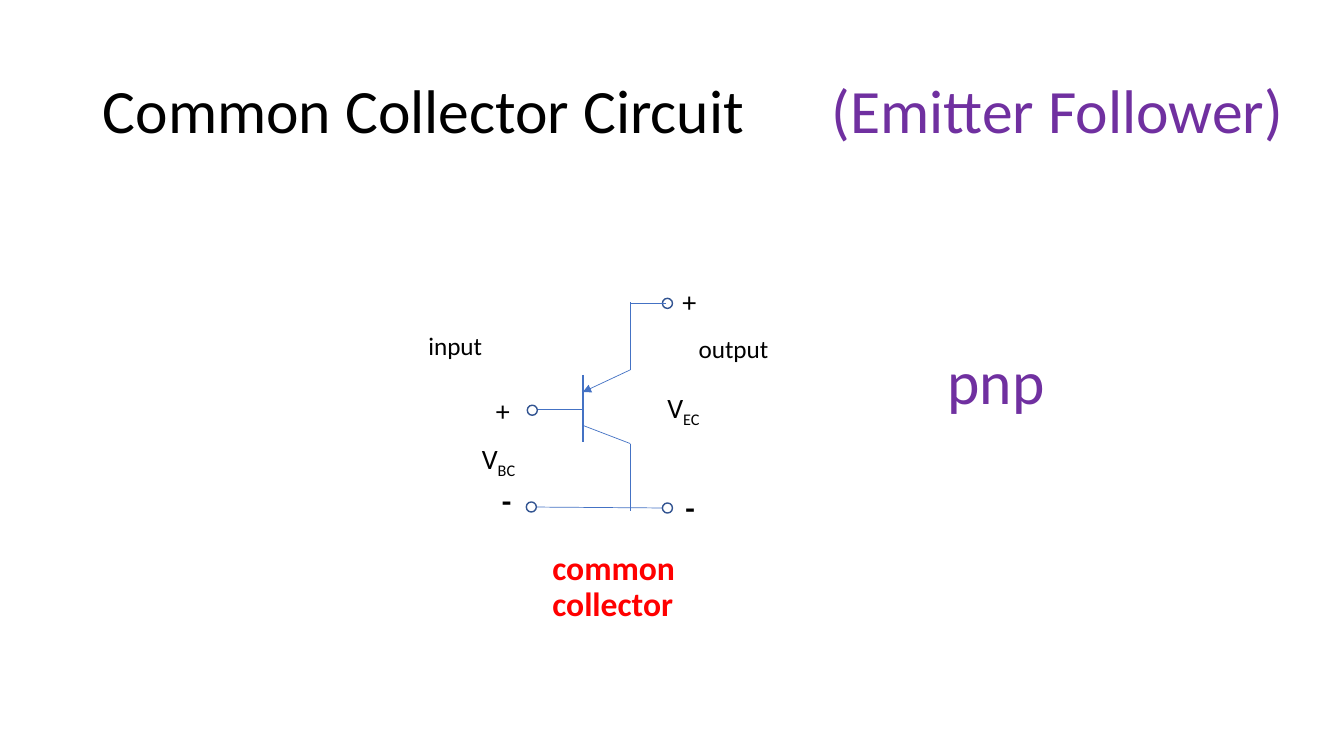
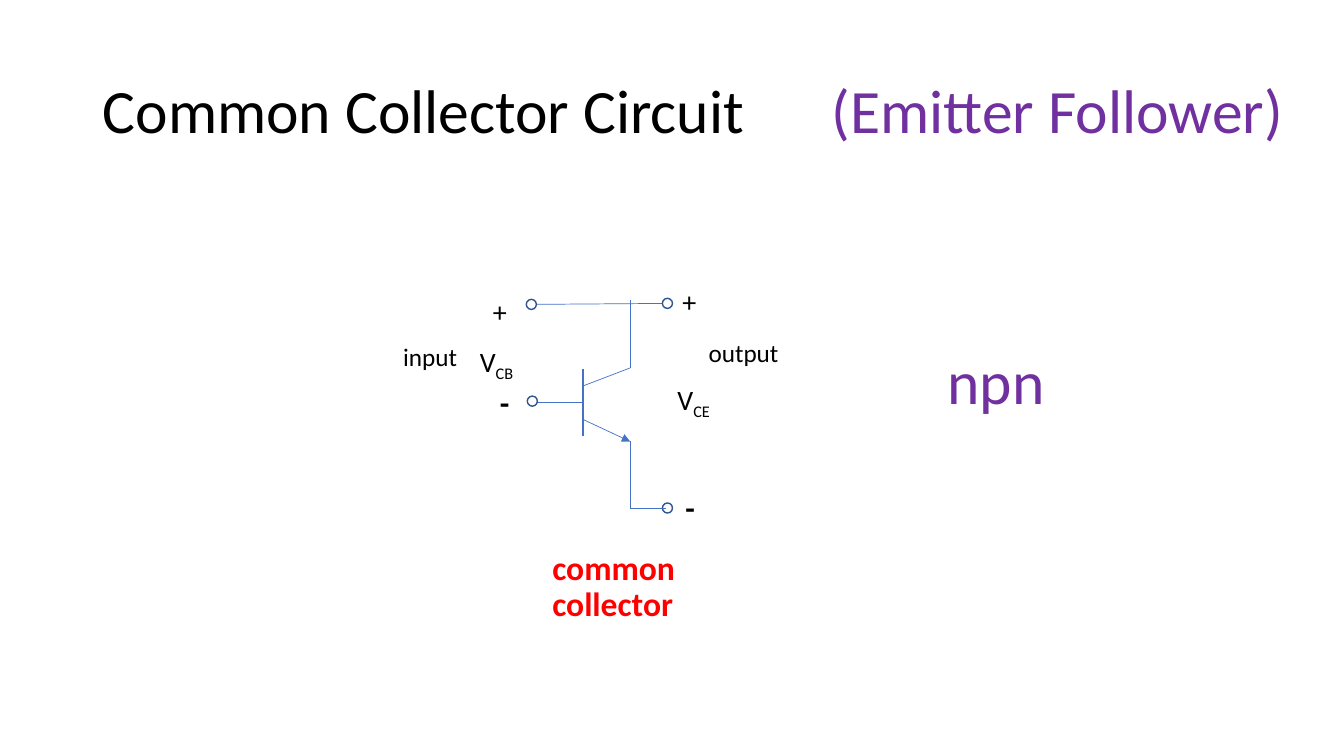
from lxml import etree
from pptx import Presentation, util as u
from pptx.dml.color import RGBColor
from pptx.enum import shapes, text
from pptx.oxml.ns import qn

PX = 9144  # EMU in one px, 100 px to the inch
COLORS = {"ink": "000000", "accent": "7030A0", "caption": "FF0000",
          "wire": "4472C4", "terminal": "325491", "paper": "FFFFFF"}
FONT = "Calibri"
MIRROR = 805  # the npn circuit is the pnp circuit with y turned into MIRROR - y

# size, colour, bold, line spacing, space before, anchor
TOP, MIDDLE = text.MSO_ANCHOR.TOP, text.MSO_ANCHOR.MIDDLE
STYLES = {
    "title": (44, "ink", False, 0.9, 0, MIDDLE),
    "heading": (44, "accent", False, 0.9, 0, MIDDLE),
    "caption": (24, "caption", True, 0.9, 10, TOP),
    "voltage": (20, "ink", False, 0.9, 10, TOP),
    "plus": (20, "ink", False, 0.8, 10, TOP),
    "minus": (22.2, "ink", True, 0.7, 10, TOP),
    "port": (18, "ink", False, 0.9, 10, TOP),
}

TITLE_BOX = (92, 40, 681, 145)
SHARED_LABELS = [
    ("caption", "common collector", (538, 542, 153, 92)),
    ("plus", "+", (667, 284, 36, 39)),
    ("minus", "-", (670, 490, 36, 39)),
    ("heading", "(Emitter Follower)", (815, 40, 489, 145)),
]
TYPE_BOX = (930, 309, 171, 145)

# from x, y to x, y, line width in points
WIRES = [
    (625, 300, 625, 367, 0.5),  # emitter lead
    (625, 440, 625, 507, 0.5),  # collector lead
    (578, 372, 578, 439, 1.5),  # base bar
    (578, 422, 625, 440, 0.5),  # collector
    (578, 406, 531, 406, 0.5),  # base lead
    (528, 503, 662, 504, 0.5),  # common rail
]
EMITTER = (625, 367, 578, 389, 0.5)
OUTPUT_LEAD = (625, 301, 661, 301, 0.5)
TERMINALS = [(527, 503), (528, 407), (662, 301), (662, 504)]
TERMINAL_SIZE = 10

CIRCUITS = [
    ("pnp", [
        ("voltage", "V", (468, 434, 61, 44), "BC"),
        ("plus", "+", (482, 392, 36, 39)),
        ("minus", "-", (488, 483, 36, 39)),
        ("voltage", "V", (652, 383, 61, 44), "EC"),
        ("port", "input", (415, 326, 84, 39)),
        ("port", "output", (683, 329, 90, 39)),
    ]),
    ("npn", [
        ("voltage", "V", (466, 337, 61, 44), "CB"),
        ("plus", "+", (479, 294, 36, 39)),
        ("minus", "-", (486, 386, 36, 39)),
        ("voltage", "V", (662, 375, 61, 44), "CE"),
        ("port", "input", (390, 337, 84, 39)),
        ("port", "output", (693, 333, 90, 39)),
    ]),
]


def write(holder, style, words, subscript=""):
    size, color, bold, spacing, before, anchor = STYLES[style]
    frame = holder.text_frame
    frame.text = words
    frame.word_wrap = True
    frame.vertical_anchor = anchor
    paragraph = frame.paragraphs[0]
    paragraph.alignment = text.PP_ALIGN.LEFT
    paragraph.line_spacing = spacing
    paragraph.space_before = u.Pt(before)
    if subscript:
        lowered = paragraph.add_run()
        lowered.text = subscript
        lowered.font._element.set("baseline", "-25000")
    for run in paragraph.runs:
        run.font.name = FONT
        run.font.size = u.Pt(size)
        run.font.bold = bold
        run.font.color.rgb = RGBColor.from_string(COLORS[color])


def draw_wire(slide, wire, flipped, arrow=False):
    x1, y1, x2, y2, width = wire
    if flipped:
        y1, y2 = MIRROR - y1, MIRROR - y2
    line = slide.shapes.add_connector(
        shapes.MSO_CONNECTOR.STRAIGHT, x1 * PX, y1 * PX, x2 * PX, y2 * PX)
    line.line.color.rgb = RGBColor.from_string(COLORS["wire"])
    line.line.width = u.Pt(width)
    properties = line._element.spPr
    if arrow:
        etree.SubElement(properties.find(qn("a:ln")), qn("a:tailEnd"), type="triangle")
    etree.SubElement(properties, qn("a:effectLst"))


deck = Presentation()
deck.slide_width, deck.slide_height = u.Inches(13.33), u.Inches(7.5)

for transistor, own_labels in CIRCUITS:
    flipped = transistor == "npn"
    slide = deck.slides.add_slide(deck.slide_layouts[5])
    title = slide.shapes.title
    title.left, title.top, title.width, title.height = (n * PX for n in TITLE_BOX)
    write(title, "title", "Common Collector Circuit")

    for wire in WIRES:
        draw_wire(slide, wire, flipped)
    x1, y1, x2, y2, width = EMITTER
    # The emitter arrow points into the base of a pnp and out of an npn
    emitter = (x2, y2, x1, y1, width) if flipped else EMITTER
    draw_wire(slide, emitter, flipped, arrow=True)

    for x, y in TERMINALS:
        center_y = MIRROR - y if flipped else y
        terminal = slide.shapes.add_shape(
            shapes.MSO_SHAPE.OVAL, (x - TERMINAL_SIZE // 2) * PX,
            (center_y - TERMINAL_SIZE // 2) * PX, TERMINAL_SIZE * PX, TERMINAL_SIZE * PX)
        terminal.shadow.inherit = False
        terminal.fill.solid()
        terminal.fill.fore_color.rgb = RGBColor.from_string(COLORS["paper"])
        terminal.line.color.rgb = RGBColor.from_string(COLORS["terminal"])
        terminal.line.width = u.Pt(1)
    draw_wire(slide, OUTPUT_LEAD, flipped)

    for style, words, box, *subscript in SHARED_LABELS + own_labels + [
            ("heading", transistor, TYPE_BOX)]:
        label = slide.shapes.add_textbox(*(n * PX for n in box))
        write(label, style, words, *subscript)

deck.save("out.pptx")
